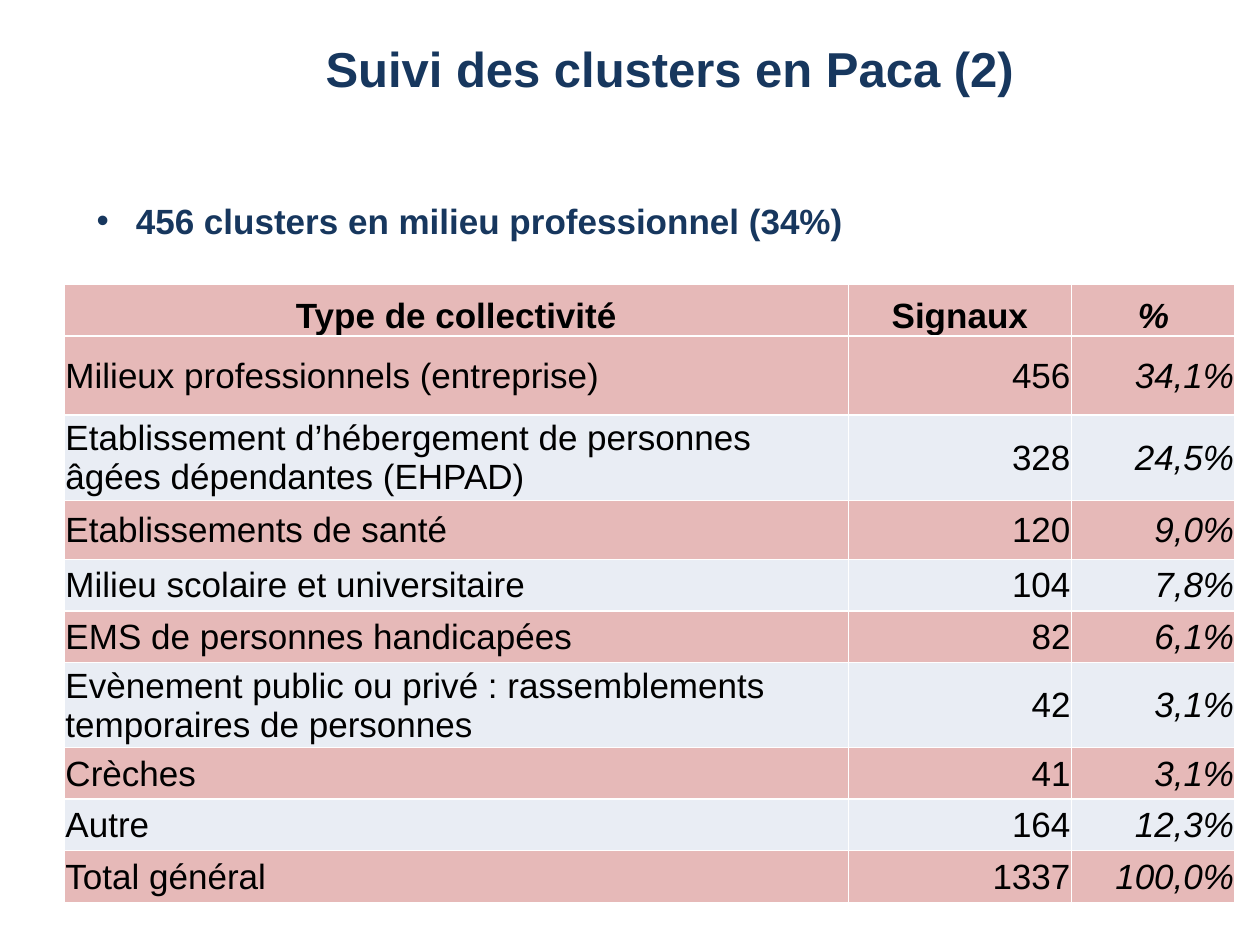
from dataclasses import dataclass

from lxml import etree
from pptx import Presentation
from pptx.dml.color import RGBColor
from pptx.enum.text import MSO_ANCHOR, PP_ALIGN
from pptx.oxml.ns import qn
from pptx.util import Cm, Pt

LEFT, CENTER, RIGHT = PP_ALIGN.LEFT, PP_ALIGN.CENTER, PP_ALIGN.RIGHT
MIDDLE, BOTTOM = MSO_ANCHOR.MIDDLE, MSO_ANCHOR.BOTTOM


@dataclass(frozen=True)
class Theme:
    font: str = "Arial"
    navy: str = "17375E"
    black: str = "000000"
    pink: str = "E6B9B8"
    pale: str = "E9EDF4"
    border: str = "FFFFFF"
    title_size: int = 28
    body_size: int = 20
    border_width: int = 1


@dataclass(frozen=True)
class Column:
    heading: str
    width: float
    align: PP_ALIGN
    italic: bool = False


@dataclass(frozen=True)
class Row:
    setting: str
    signals: str
    share: str
    height: float = 1.04


THEME = Theme()
HEADER_HEIGHT = 1.04

COLUMNS = [
    Column("Type de collectivité", 15.8, LEFT),
    Column("Signaux", 4.5, RIGHT),
    Column("%", 3.3, RIGHT, italic=True),
]

ROWS = [
    Row("Milieux professionnels (entreprise)", "456", "34,1%", 1.6),
    Row("Etablissement d’hébergement de personnes âgées dépendantes (EHPAD)",
        "328", "24,5%", 1.63),
    Row("Etablissements de santé", "120", "9,0%", 1.19),
    Row("Milieu scolaire et universitaire", "104", "7,8%"),
    Row("EMS de personnes handicapées", "82", "6,1%"),
    Row("Evènement public ou privé : rassemblements temporaires de personnes",
        "42", "3,1%", 1.63),
    Row("Crèches", "41", "3,1%"),
    Row("Autre", "164", "12,3%"),
    Row("Total général", "1337", "100,0%"),
]


def style_paragraph(paragraph, size: int, color: str, align: PP_ALIGN,
                    bold: bool = False, italic: bool = False) -> None:
    paragraph.alignment = align
    font = paragraph.font
    font.name, font.size = THEME.font, Pt(size)
    font.bold, font.italic = bold, italic
    font.color.rgb = RGBColor.from_string(color)


def add_title(slide, text: str) -> None:
    shape = slide.shapes.add_textbox(Cm(5.1), Cm(0.05), Cm(16.8), Cm(2.65))
    frame = shape.text_frame
    frame.word_wrap = False
    frame.vertical_anchor = MIDDLE
    frame.margin_left = frame.margin_right = Cm(0)
    frame.margin_top = frame.margin_bottom = Cm(0)
    frame.text = text
    style_paragraph(frame.paragraphs[0], THEME.title_size, THEME.navy, CENTER, bold=True)


def add_bullet_line(slide, text: str) -> None:
    shape = slide.shapes.add_textbox(Cm(1.7), Cm(3.9), Cm(15.67), Cm(1.11))
    frame = shape.text_frame
    frame.word_wrap = False
    frame.text = text
    paragraph = frame.paragraphs[0]
    properties = paragraph._p.get_or_add_pPr()
    properties.set("marL", str(Cm(0.79)))
    properties.set("indent", str(-Cm(0.79)))
    etree.SubElement(properties, qn("a:buFont"), typeface=THEME.font)
    etree.SubElement(properties, qn("a:buChar"), char="•")
    style_paragraph(paragraph, THEME.body_size, THEME.navy, LEFT, bold=True)


def set_borders(cell) -> None:
    properties = cell._tc.get_or_add_tcPr()
    for side in ("a:lnL", "a:lnR", "a:lnT", "a:lnB"):
        line = etree.SubElement(properties, qn(side), w=str(Pt(THEME.border_width)))
        fill = etree.SubElement(line, qn("a:solidFill"))
        etree.SubElement(fill, qn("a:srgbClr"), val=THEME.border)


def fill_cell(cell, text: str, color: str, align: PP_ALIGN, anchor: MSO_ANCHOR,
              bold: bool, italic: bool) -> None:
    cell.margin_left = cell.margin_right = cell.margin_top = Cm(0.02)
    cell.margin_bottom = Cm(0)
    cell.vertical_anchor = anchor
    # Borders must come before the fill in the cell properties
    set_borders(cell)
    cell.fill.solid()
    cell.fill.fore_color.rgb = RGBColor.from_string(color)
    cell.text = text
    style_paragraph(cell.text_frame.paragraphs[0], THEME.body_size, THEME.black,
                    align, bold, italic)


def add_cluster_table(slide, columns: list[Column], rows: list[Row]) -> None:
    heights = [HEADER_HEIGHT] + [row.height for row in rows]
    total_width = sum(column.width for column in columns)
    table = slide.shapes.add_table(len(heights), len(columns), Cm(1.3), Cm(5.73),
                                   Cm(total_width), Cm(sum(heights))).table
    table.first_row = table.horz_banding = False
    for table_row, height in zip(table.rows, heights):
        table_row.height = Cm(height)

    for column_index, column in enumerate(columns):
        table.columns[column_index].width = Cm(column.width)
        fill_cell(table.cell(0, column_index), column.heading, THEME.pink,
                  CENTER, BOTTOM, True, column.italic)

    # Body rows alternate, starting with pink
    for row_index, row in enumerate(rows, start=1):
        color = THEME.pink if row_index % 2 else THEME.pale
        values = (row.setting, row.signals, row.share)
        for column_index, (column, value) in enumerate(zip(columns, values)):
            fill_cell(table.cell(row_index, column_index), value, color,
                      column.align, MIDDLE, False, column.italic)


def main() -> None:
    presentation = Presentation()
    presentation.slide_width, presentation.slide_height = Cm(25.4), Cm(19.05)
    slide = presentation.slides.add_slide(presentation.slide_layouts[6])

    add_title(slide, "Suivi des clusters en Paca (2)")
    add_bullet_line(slide, "456 clusters en milieu professionnel (34%)")
    add_cluster_table(slide, COLUMNS, ROWS)

    presentation.save("out.pptx")


if __name__ == "__main__":
    main()
